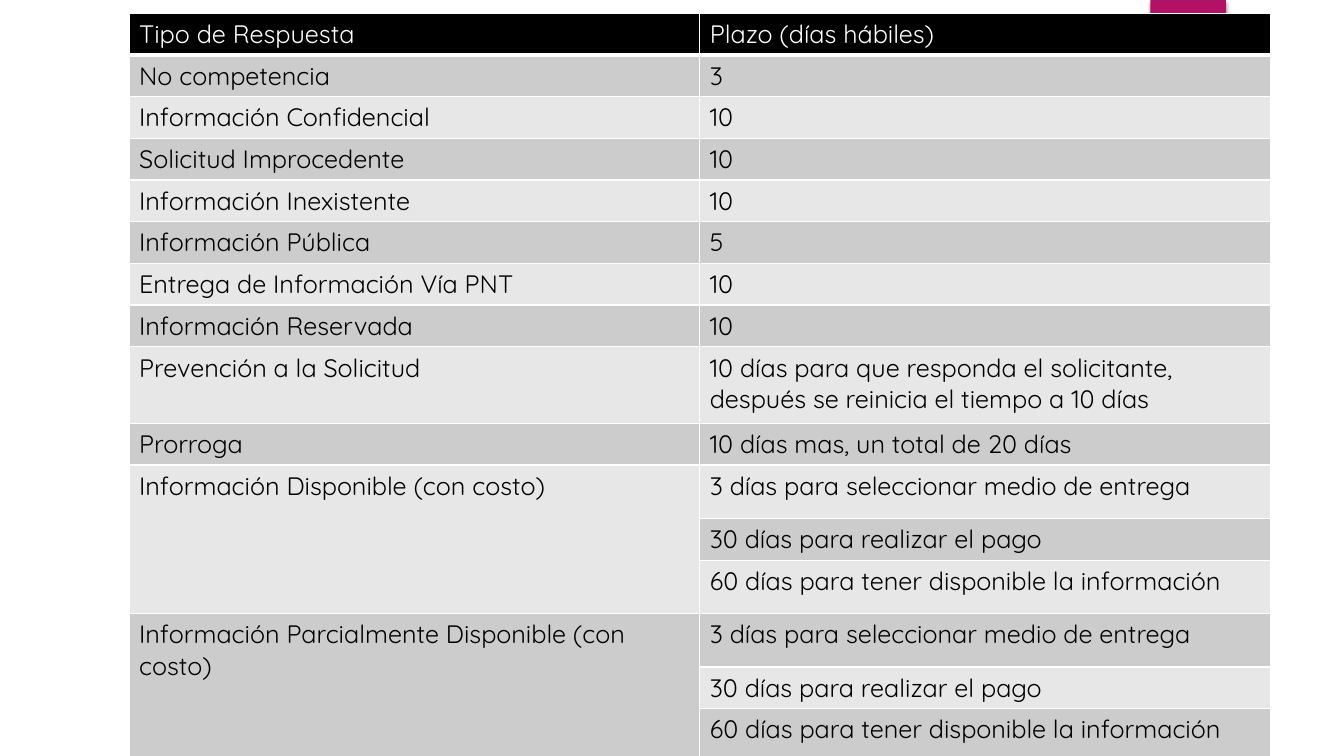
from dataclasses import dataclass

from lxml import etree
from pptx import Presentation
from pptx import util as u
from pptx.dml import color
from pptx.enum import shapes
from pptx.oxml import ns, parse_xml

SLIDE_W, SLIDE_H = u.Inches(13.33), u.Inches(7.5)
FONT = "Quicksand"
STRIPES = ("E7E7E7", "CCCCCC")
LINE, TALL, DOUBLE = 0.37, 0.53, 0.76  # row heights in inches


@dataclass(frozen=True)
class Term:
    wording: str
    height: float = LINE


@dataclass(frozen=True)
class Answer:
    kind: str
    terms: tuple[Term, ...]


def payment_terms(payment_height: float = LINE) -> tuple[Term, ...]:
    return (
        Term("3 días para seleccionar medio de entrega", TALL),
        Term("30 días para realizar el pago", payment_height),
        Term("60 días para tener disponible la información", TALL),
    )


ANSWERS = (
    Answer("Tipo de Respuesta", (Term("Plazo (días hábiles)"),)),
    Answer("No competencia", (Term("3"),)),
    Answer("Información Confidencial", (Term("10"),)),
    Answer("Solicitud Improcedente", (Term("10"),)),
    Answer("Información Inexistente", (Term("10"),)),
    Answer("Información Pública", (Term("5"),)),
    Answer("Entrega de Información Vía PNT", (Term("10"),)),
    Answer("Información Reservada", (Term("10"),)),
    Answer("Prevención a la Solicitud", (Term(
        "10 días para que responda el solicitante, "
        "después se reinicia el tiempo a 10 días", DOUBLE),)),
    Answer("Prorroga", (Term("10 días mas, un total de 20 días"),)),
    Answer("Información Disponible (con costo)", payment_terms()),
    Answer("Información Parcialmente Disponible (con costo)", payment_terms()),
)


def rgb(value: str) -> color.RGBColor:
    return color.RGBColor.from_string(value)


def across(inches: float) -> int:
    """Length as a share of the slide's width."""
    return round(SLIDE_W * inches / 13.33)


def down(inches: float) -> int:
    """Length as a share of the slide's height."""
    return round(SLIDE_H * inches / 7.5)


def add_borders(cell, bottom: float) -> None:
    properties = cell._tc.get_or_add_tcPr()
    for side, width in (("L", 1), ("R", 1), ("T", 1), ("B", bottom)):
        line = etree.SubElement(properties, ns.qn(f"a:ln{side}"), w=str(u.Pt(width)))
        fill = etree.SubElement(line, ns.qn("a:solidFill"))
        etree.SubElement(fill, ns.qn("a:srgbClr"), val="FFFFFF")


def fill_cell(cell, wording: str, row: int) -> None:
    heading = row == 0
    add_borders(cell, 3 if heading else 1)
    cell.fill.solid()
    cell.fill.fore_color.rgb = rgb("000000" if heading else STRIPES[row % 2])
    if wording:
        run = cell.text_frame.paragraphs[0].add_run()
        run.text = wording
        run.font.name = FONT
        run.font.size = u.Pt(18)
        run.font.bold = False
        run.font.color.rgb = rgb("FFFFFF" if heading else "000000")


def add_ribbon(slide) -> None:
    ribbon = slide.shapes.add_shape(
        shapes.MSO_SHAPE.RECTANGLE, across(11.41), 0, across(0.75), down(1.25))
    ribbon.fill.solid()
    ribbon.fill.fore_color.rgb = rgb("B31166")
    ribbon.line.fill.background()
    ribbon.shadow.inherit = False
    ribbon._element.spPr.find(ns.qn("a:effectLst")).append(parse_xml(
        f'<a:outerShdw {ns.nsdecls("a")} blurRad="{u.Pt(3)}" dist="{u.Pt(2)}" '
        'dir="5400000" rotWithShape="0"><a:srgbClr val="000000">'
        '<a:alpha val="45000"/></a:srgbClr></a:outerShdw>'))


def add_deadlines(slide, answers: tuple[Answer, ...]) -> None:
    terms = [term for answer in answers for term in answer.terms]
    height = down(sum(term.height for term in terms))
    deadlines = slide.shapes.add_table(
        len(terms), 2, across(1.28), down(0.13), across(11.32), height).table
    deadlines.first_row = deadlines.horz_banding = False
    for row, term in zip(deadlines.rows, terms):
        row.height = down(term.height)

    # Each answer spans as many rows as it has terms
    first = 0
    for answer in answers:
        for offset, term in enumerate(answer.terms):
            row = first + offset
            fill_cell(deadlines.cell(row, 0), "" if offset else answer.kind, row)
            fill_cell(deadlines.cell(row, 1), term.wording, row)
        last = first + len(answer.terms) - 1
        if last > first:
            deadlines.cell(first, 0).merge(deadlines.cell(last, 0))
        first = last + 1


def main() -> None:
    deck = Presentation()
    deck.slide_width, deck.slide_height = SLIDE_W, SLIDE_H
    slide = deck.slides.add_slide(deck.slide_layouts[6])
    add_ribbon(slide)
    add_deadlines(slide, ANSWERS)
    deck.save("out.pptx")


if __name__ == "__main__":
    main()
